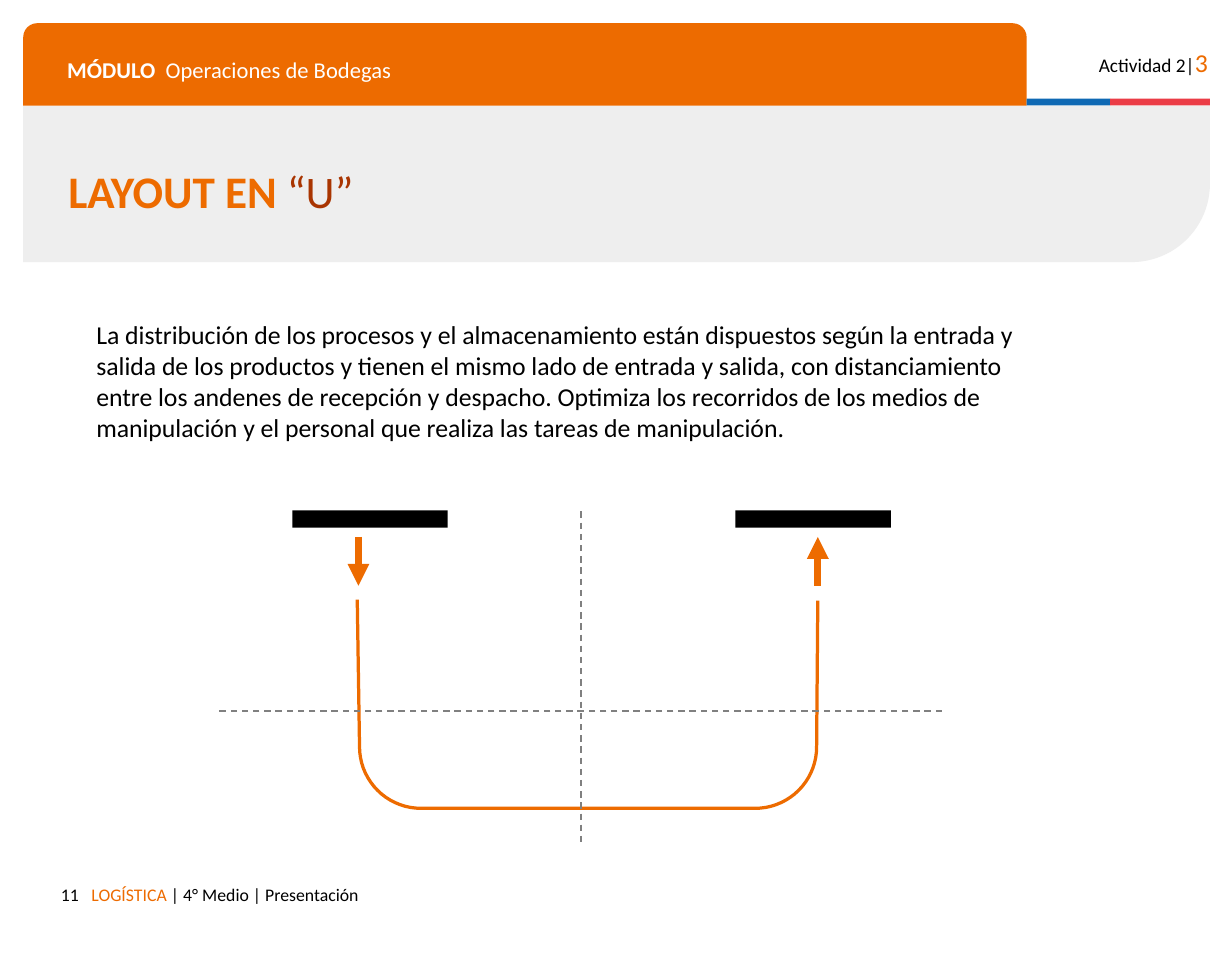
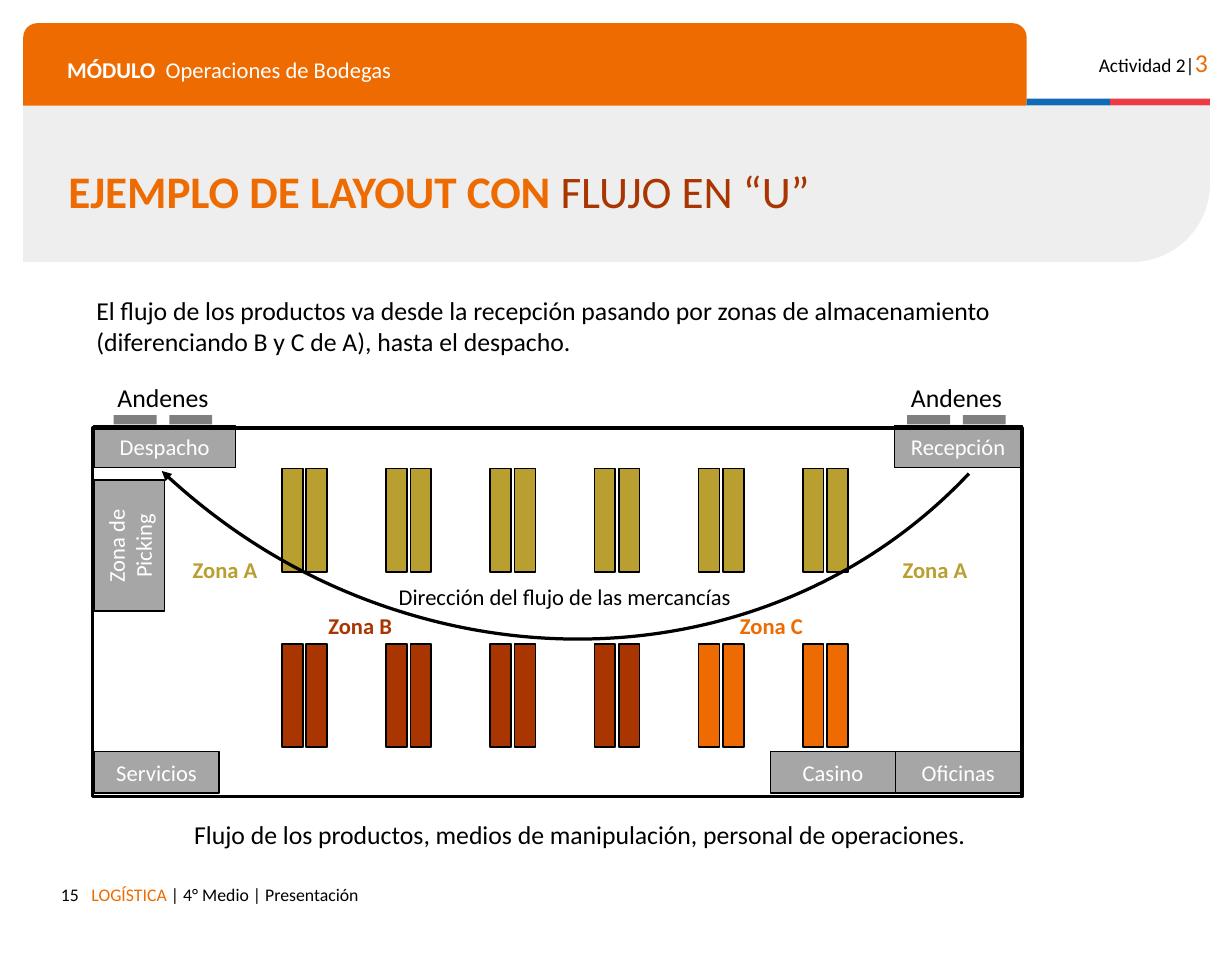
"""Builds two slides on the U-shaped warehouse layout."""
from math import cos, radians, sin

from lxml.etree import SubElement
from pptx import Presentation
from pptx.dml.color import RGBColor
from pptx.enum.dml import MSO_LINE
from pptx.enum.shapes import MSO_CONNECTOR, MSO_SHAPE
from pptx.enum.text import MSO_ANCHOR, MSO_AUTO_SIZE, PP_ALIGN
from pptx.oxml.ns import qn
from pptx.util import Inches, Pt

FONT = "Calibri"
COLORS = {
    "orange": "ED6B00", "rust": "A93501", "gold": "B99F2F", "band": "EEEEEE",
    "blue": "0F69B4", "red": "EB3C46", "black": "000000", "white": "FFFFFF",
    "room": "A6A6A6", "dock": "808080",
}
LEFT, CENTER, RIGHT = PP_ALIGN.LEFT, PP_ALIGN.CENTER, PP_ALIGN.RIGHT

MODULE = [("MÓDULO", 14, "white", True), ("\tOperaciones de Bodegas", 14, "white", False)]
ACTIVITY = [("Actividad 2|", 12, "black", False), ("3", 16, "orange", False)]
FOOTER = [("LOGÍSTICA ", 11, "orange", False), ("| 4° Medio | Presentación", 11, "black", False)]
STRIPES = [("blue", 8.85, 0.72), ("red", 9.57, 0.86)]

FLOW = {
    "page": "11",
    "title": ("LAYOUT EN", " “U”"),
    "intro": "La distribución de los procesos y el almacenamiento están dispuestos según la "
             "entrada y salida de los productos y tienen el mismo lado de entrada y salida, con "
             "distanciamiento entre los andenes de recepción y despacho. Optimiza los recorridos "
             "de los medios de manipulación y el personal que realiza las tareas de manipulación.",
    "intro_box": (0.78, 2.7, 8.15, 1.16),
}
GATES = [2.52, 6.34]
AXES = [((5.01, 4.41), (5.01, 7.26)), ((8.12, 6.13), (1.87, 6.13))]
GATE_ARROWS = [((3.09, 4.63), (3.09, 5.05)), ((7.05, 5.05), (7.05, 4.63))]
U_ENDS = [(7.05, 5.18), (3.08, 5.17)]
U_CORNERS = [(6.51, 6.44, 0), (3.63, 6.44, 90)]
U_RADIUS = 0.53

EXAMPLE = {
    "page": "15",
    "title": ("EJEMPLO DE LAYOUT CON ", "FLUJO EN “U”"),
    "intro": "El flujo de los productos va desde la recepción pasando por zonas de "
             "almacenamiento (diferenciando B y C de A), hasta el despacho.",
    "intro_box": (0.78, 2.49, 8.05, 0.61),
}
ROOMS = [
    (["Recepción"], (7.71, 3.67, 1.1, 0.36), 0),
    (["Despacho"], (0.81, 3.67, 1.22, 0.36), 0),
    (["Oficinas"], (7.72, 6.48, 1.08, 0.36), 0),
    (["Servicios"], (0.81, 6.48, 1.08, 0.36), 0),
    (["Casino"], (6.64, 6.48, 1.08, 0.36), 0),
    (["Zona de", "Picking"], (0.55, 4.4, 1.13, 0.61), 270),
]
LABELS = [
    ("Flujo de los productos, medios de manipulación, personal de operaciones.",
     16, "black", False, (0.93, 7.01, 8.14, 0.33)),
    ("Dirección del flujo de las mercancías", 14, "black", False, (2.73, 4.98, 4.28, 0.31)),
    ("Zona A", 14, "gold", True, (1.59, 4.74, 0.7, 0.31)),
    ("Zona A", 14, "gold", True, (7.71, 4.74, 0.7, 0.31)),
    ("Zona B", 14, "rust", True, (2.74, 5.23, 0.73, 0.31)),
    ("Zona C", 14, "orange", True, (6.27, 5.23, 0.76, 0.31)),
]
DOCK_LABELS = [0.88, 7.72]
DOCK_OFFSETS = [0.1, 0.58]
RACK_ROWS = [(4.04, ["gold"] * 6), (5.55, ["rust"] * 4 + ["orange"] * 2)]
RACK_LEFT, RACK_PITCH, RACK_PAIR = 2.43, 4.49 / 5, 0.21
RACK_SIZE = (0.18, 0.89)
WAREHOUSE = (0.8, 3.69, 8.01, 3.18)
FLOW_ARC = (-0.1, -4.48, 9.51, 10.16)


def color(name):
    return RGBColor.from_string(COLORS[name])


def inches(values):
    return [Inches(value) for value in values]


def style_line(line, name, width):
    line.color.rgb = color(name)
    line.width = Pt(width)


def add_arrowhead(line_owner):
    line = line_owner.line._get_or_add_ln()
    SubElement(line, qn("a:tailEnd"), type="triangle")


def add_block(slide, box, fill=None, line=None, width=1, kind=MSO_SHAPE.RECTANGLE, turn=0):
    block = slide.shapes.add_shape(kind, *inches(box))
    block.shadow.inherit = False
    block.rotation = turn
    if fill:
        block.fill.solid()
        block.fill.fore_color.rgb = color(fill)
    else:
        block.fill.background()
    if line:
        style_line(block.line, line, width)
    else:
        block.line.fill.background()
    return block


def fill_text(frame, paragraphs, align=LEFT, inset=0.05, anchor=MSO_ANCHOR.TOP,
              spacing=None, tab=None, wrap=True):
    frame.word_wrap = wrap
    frame.vertical_anchor = anchor
    frame.margin_left = frame.margin_right = Inches(inset)
    frame.margin_top = frame.margin_bottom = Inches(inset)
    for index, runs in enumerate(paragraphs):
        paragraph = frame.add_paragraph() if index else frame.paragraphs[0]
        paragraph.alignment = align
        if spacing:
            paragraph.line_spacing = spacing
        if tab:
            stops = SubElement(paragraph._p.get_or_add_pPr(), qn("a:tabLst"))
            SubElement(stops, qn("a:tab"), pos=str(Inches(tab)), algn="l")
        for text, size, name, bold in runs:
            run = paragraph.add_run()
            run.text = text
            run.font.name = FONT
            run.font.size = Pt(size)
            run.font.bold = bold
            run.font.color.rgb = color(name)


def add_text(slide, box, runs, **options):
    frame = slide.shapes.add_textbox(*inches(box)).text_frame
    fill_text(frame, [runs], **options)
    frame.auto_size = MSO_AUTO_SIZE.SHAPE_TO_FIT_TEXT


def add_line(slide, ends, name, width):
    start, end = ends
    line = slide.shapes.add_connector(MSO_CONNECTOR.STRAIGHT, *inches(start + end))
    style_line(line.line, name, width)
    SubElement(line._element.spPr, qn("a:effectLst"))
    return line


def add_base(deck, content):
    slide = deck.slides.add_slide(deck.slide_layouts[6])
    title_band = add_block(slide, (4.64, -3.53, 1.35, 10.23), "band",
                           kind=MSO_SHAPE.ROUND_1_RECTANGLE, turn=90)
    title_band.adjustments[0] = 0.5
    module_band = add_block(slide, (0.2, 0.2, 8.65, 0.71), "orange",
                            kind=MSO_SHAPE.ROUND_2_SAME_RECTANGLE)
    module_band.adjustments[0] = 0.17
    for name, left, width in STRIPES:
        add_block(slide, (left, 0.85, width, 0.06), name)
    add_text(slide, (9.23, 0.3, 1.28, 0.43), ACTIVITY, align=RIGHT, inset=0.1)
    add_text(slide, (0.69, 7.53, 7.14, 0.35), FOOTER, inset=0.1)
    add_text(slide, (0.48, 0.38, 8.14, 0.41), MODULE, inset=0.1, tab=0.85)
    add_text(slide, (0.41, 7.53, 0.37, 0.35), [(content["page"], 11, "black", False)],
             align=RIGHT, inset=0.1, wrap=False)
    strong, light = content["title"]
    add_text(slide, (0.49, 1.39, 9.79, 0.59),
             [(strong, 28, "orange", True), (light, 28, "rust", False)],
             inset=0.1, anchor=MSO_ANCHOR.MIDDLE, spacing=0.8)
    add_text(slide, content["intro_box"], [(content["intro"], 16, "black", False)])
    return slide


def add_u_path(slide):
    start, end = U_ENDS
    points = [start]
    for x, y, first in U_CORNERS:
        for angle in range(first, first + 91, 5):
            points.append((x + U_RADIUS * cos(radians(angle)),
                           y + U_RADIUS * sin(radians(angle))))
    points.append(end)
    builder = slide.shapes.build_freeform(*inches(start))
    builder.add_line_segments([inches(point) for point in points[1:]], close=False)
    path_shape = builder.convert_to_shape()
    path_shape.shadow.inherit = False
    path_shape.fill.background()
    style_line(path_shape.line, "orange", 2)


def build_flow(deck):
    slide = add_base(deck, FLOW)
    add_u_path(slide)
    for ends in AXES:
        add_line(slide, ends, "dock", 1).line.dash_style = MSO_LINE.DASH
    for ends in GATE_ARROWS:
        add_arrowhead(add_line(slide, ends, "orange", 4.5))
    for left in GATES:
        add_block(slide, (left, 4.4, 1.34, 0.15), "black")


def build_example(deck):
    slide = add_base(deck, EXAMPLE)
    for left in DOCK_LABELS:
        add_text(slide, (left, 3.24, 1.05, 0.33), [("Andenes", 16, "black", False)], align=CENTER)
        for offset in DOCK_OFFSETS:
            add_block(slide, (left + offset, 3.58, 0.37, 0.08), "dock")
    for lines, box, turn in ROOMS:
        room = add_block(slide, box, "room", "black", turn=turn)
        fill_text(room.text_frame, [[(line, 14, "white", False)] for line in lines],
                  align=CENTER, inset=0.02, anchor=MSO_ANCHOR.MIDDLE)
    for top, names in RACK_ROWS:
        for column, name in enumerate(names):
            for side in range(2):
                left = RACK_LEFT + column * RACK_PITCH + side * RACK_PAIR
                add_block(slide, (left, top, *RACK_SIZE), name, "black")
    for text, size, name, bold, box in LABELS:
        add_text(slide, box, [(text, size, name, bold)], align=CENTER)
    add_block(slide, WAREHOUSE, line="black", width=2)
    add_arrowhead(add_block(slide, FLOW_ARC, line="black", width=2,
                            kind=MSO_SHAPE.ARC, turn=133.3))


def main():
    deck = Presentation()
    deck.slide_width, deck.slide_height = inches((10.62, 8.26))
    build_flow(deck)
    build_example(deck)
    deck.save("out.pptx")


if __name__ == "__main__":
    main()
